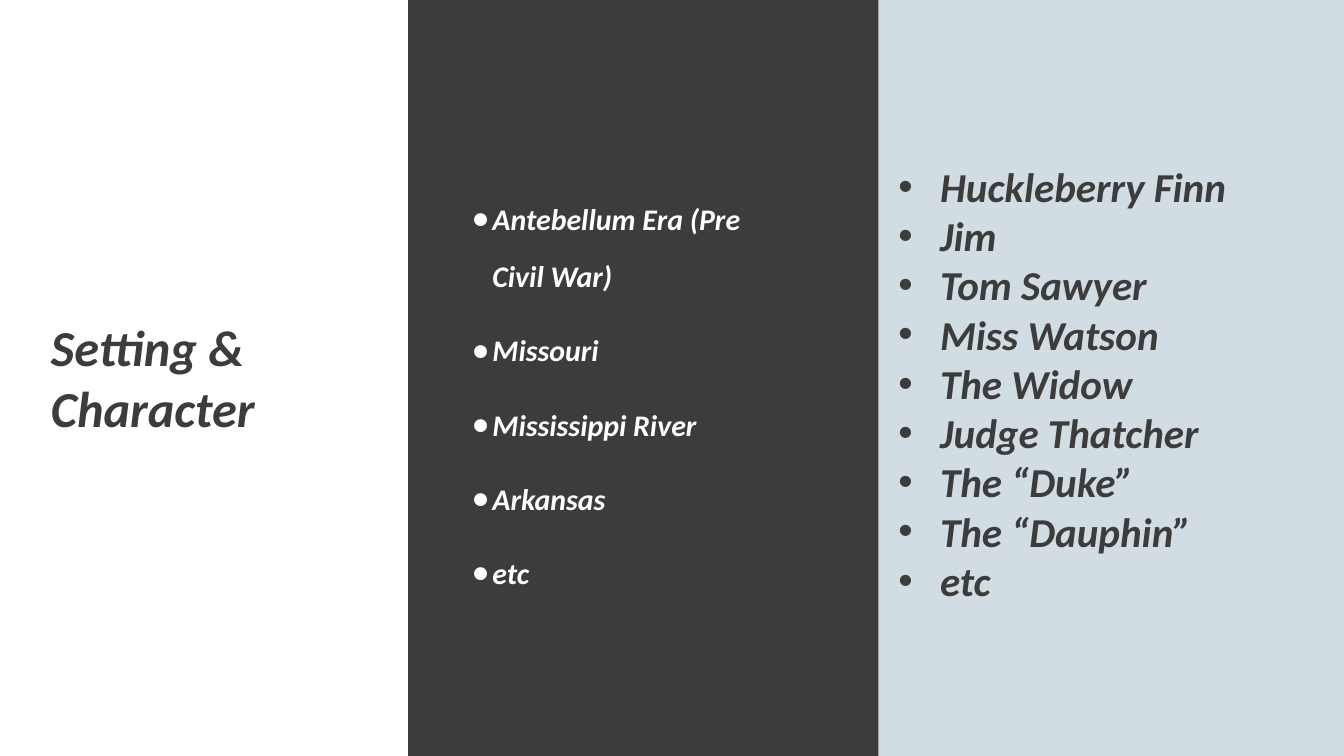
from dataclasses import dataclass

from lxml.etree import SubElement
from pptx import Presentation
from pptx.dml.color import RGBColor
from pptx.enum.shapes import MSO_SHAPE
from pptx.enum.text import MSO_ANCHOR
from pptx.oxml.ns import qn
from pptx.util import Inches, Pt


@dataclass(frozen=True)
class Theme:
    dark: RGBColor = RGBColor(0x3C, 0x3C, 0x3C)
    white: RGBColor = RGBColor(0xFF, 0xFF, 0xFF)
    pale: RGBColor = RGBColor(0xD1, 0xDD, 0xE2)
    font: str = "Calibri"
    title_size: int = 54
    character_size: int = 44
    setting_size: int = 32


THEME = Theme()
WIDTH, HEIGHT = 20, 11.25
TITLE = ["Setting &", "Character"]
SETTINGS = [
    "Antebellum Era (Pre Civil War)",
    "Missouri",
    "Mississippi River",
    "Arkansas",
    "etc",
]
CHARACTERS = [
    "Huckleberry Finn",
    "Jim",
    "Tom Sawyer",
    "Miss Watson",
    "The Widow",
    "Judge Thatcher",
    "The “Duke”",
    "The “Dauphin”",
    "etc",
]


def set_attributes(target, values):
    for name, value in values.items():
        setattr(target, name, value)


def add_bullet(paragraph, character, indent):
    properties = paragraph._p.get_or_add_pPr()
    properties.set("marL", str(Inches(indent)))
    properties.set("indent", str(-Inches(indent)))
    SubElement(properties, qn("a:buFont"), typeface="Arial")
    SubElement(properties, qn("a:buChar"), char=character)


def add_panel(slide, box, color):
    panel = slide.shapes.add_shape(MSO_SHAPE.RECTANGLE, *map(Inches, box))
    panel.shadow.inherit = False
    panel.fill.solid()
    panel.fill.fore_color.rgb = color
    panel.line.fill.background()


def add_lines(slide, box, lines, size, color, bullet=None, indent=0, spacing=None, gap=0):
    frame = slide.shapes.add_textbox(*map(Inches, box)).text_frame
    frame.word_wrap = True
    for index, line in enumerate(lines):
        paragraph = frame.paragraphs[0] if index == 0 else frame.add_paragraph()
        paragraph.text = line
        if bullet:
            add_bullet(paragraph, bullet, indent)
        if spacing:
            paragraph.line_spacing = spacing
        if gap and index:
            paragraph.space_before = Pt(gap)
        set_attributes(
            paragraph.font,
            {"name": THEME.font, "size": Pt(size), "bold": True, "italic": True},
        )
        paragraph.font.color.rgb = color
    return frame


def add_title_region(slide, box):
    left, top, width, height = box
    add_panel(slide, box, THEME.white)
    text_box = (left + 0.66, top + 4.66, width - 1.32, 1.92)
    add_lines(slide, text_box, TITLE, THEME.title_size, THEME.dark)


def add_setting_region(slide, box):
    left, top, width, height = box
    text_box = (left + 0.85, top + 1.36, 4.44, 9.16)
    frame = add_lines(
        slide, text_box, SETTINGS, THEME.setting_size, THEME.white,
        bullet="●", indent=0.31, spacing=1.6, gap=18,
    )
    set_attributes(
        frame,
        {"vertical_anchor": MSO_ANCHOR.MIDDLE, "margin_bottom": Inches(0.48)},
    )


def add_character_region(slide, box):
    left, top, width, height = box
    add_panel(slide, box, THEME.pale)
    text_box = (left + 0.2, top + 2.35, 6.39, 6.77)
    add_lines(
        slide, text_box, CHARACTERS, THEME.character_size, THEME.dark,
        bullet="•", indent=0.62,
    )


def main():
    presentation = Presentation()
    set_attributes(
        presentation,
        {"slide_width": Inches(WIDTH), "slide_height": Inches(HEIGHT)},
    )
    slide = presentation.slides.add_slide(presentation.slide_layouts[6])
    slide.background.fill.solid()
    slide.background.fill.fore_color.rgb = THEME.dark

    left = 0
    regions = [
        (add_title_region, 6.07),
        (add_setting_region, 7),
        (add_character_region, 6.93),
    ]
    for add_region, width in regions:
        add_region(slide, (left, 0, width, HEIGHT))
        left += width

    presentation.save("out.pptx")


if __name__ == "__main__":
    main()
